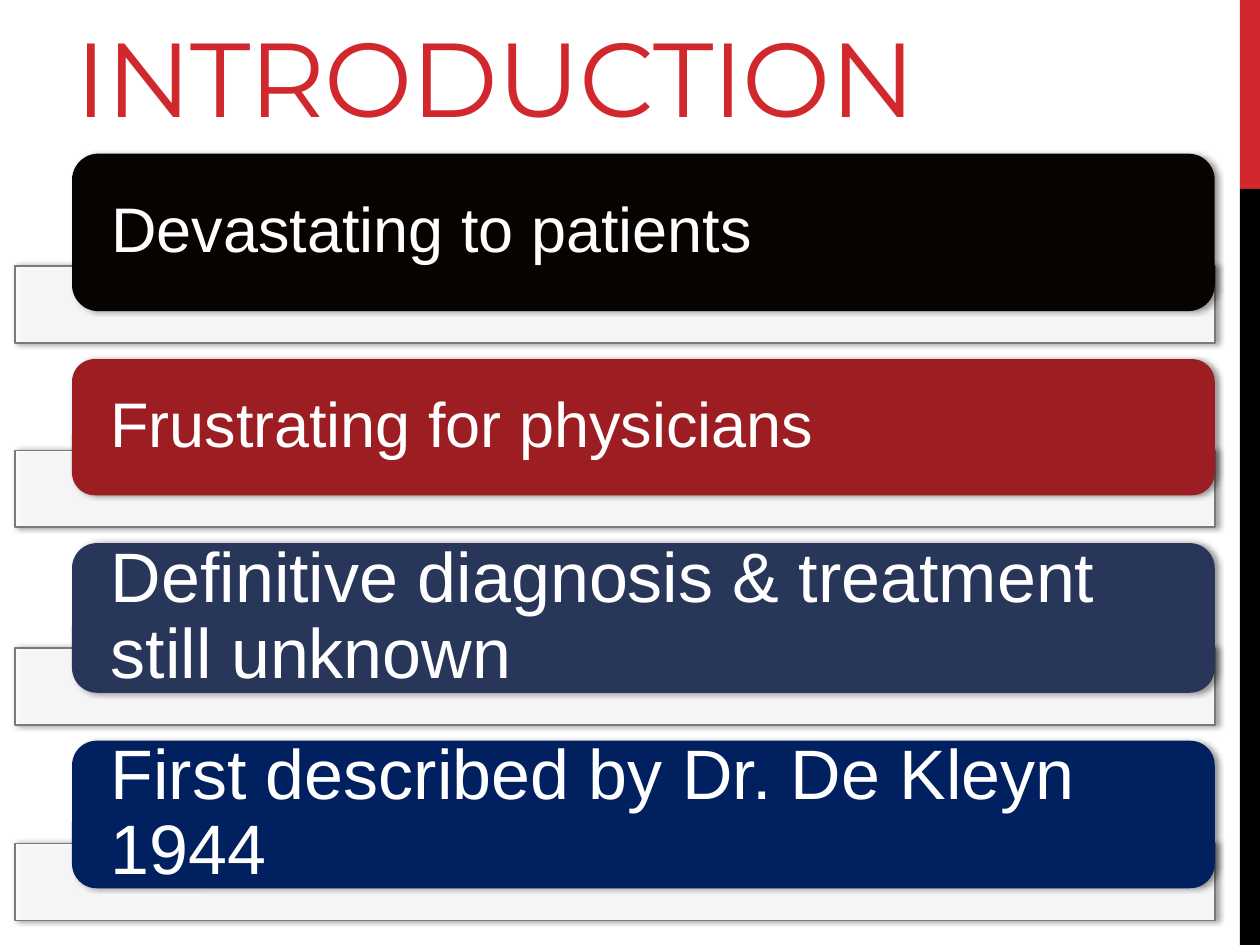
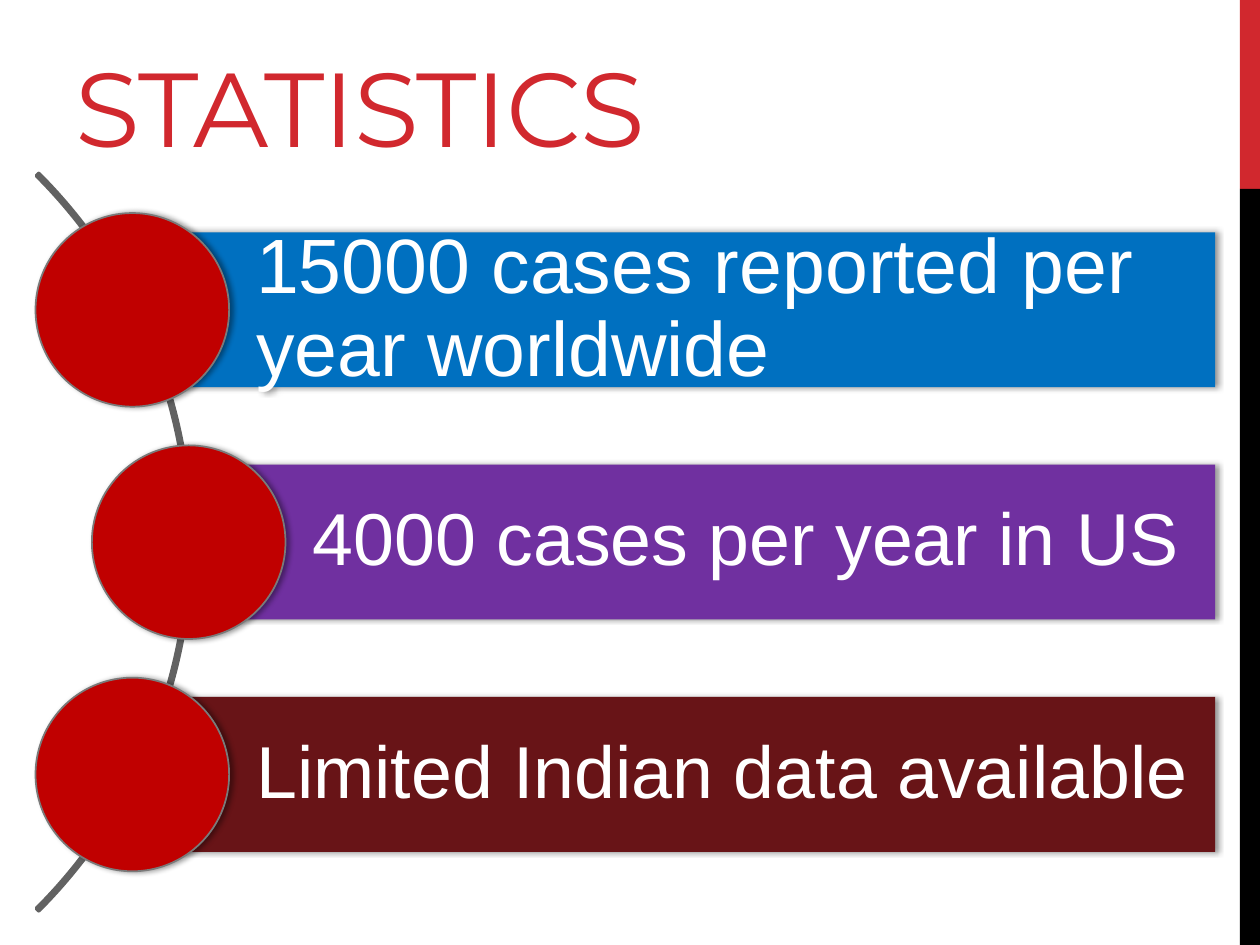
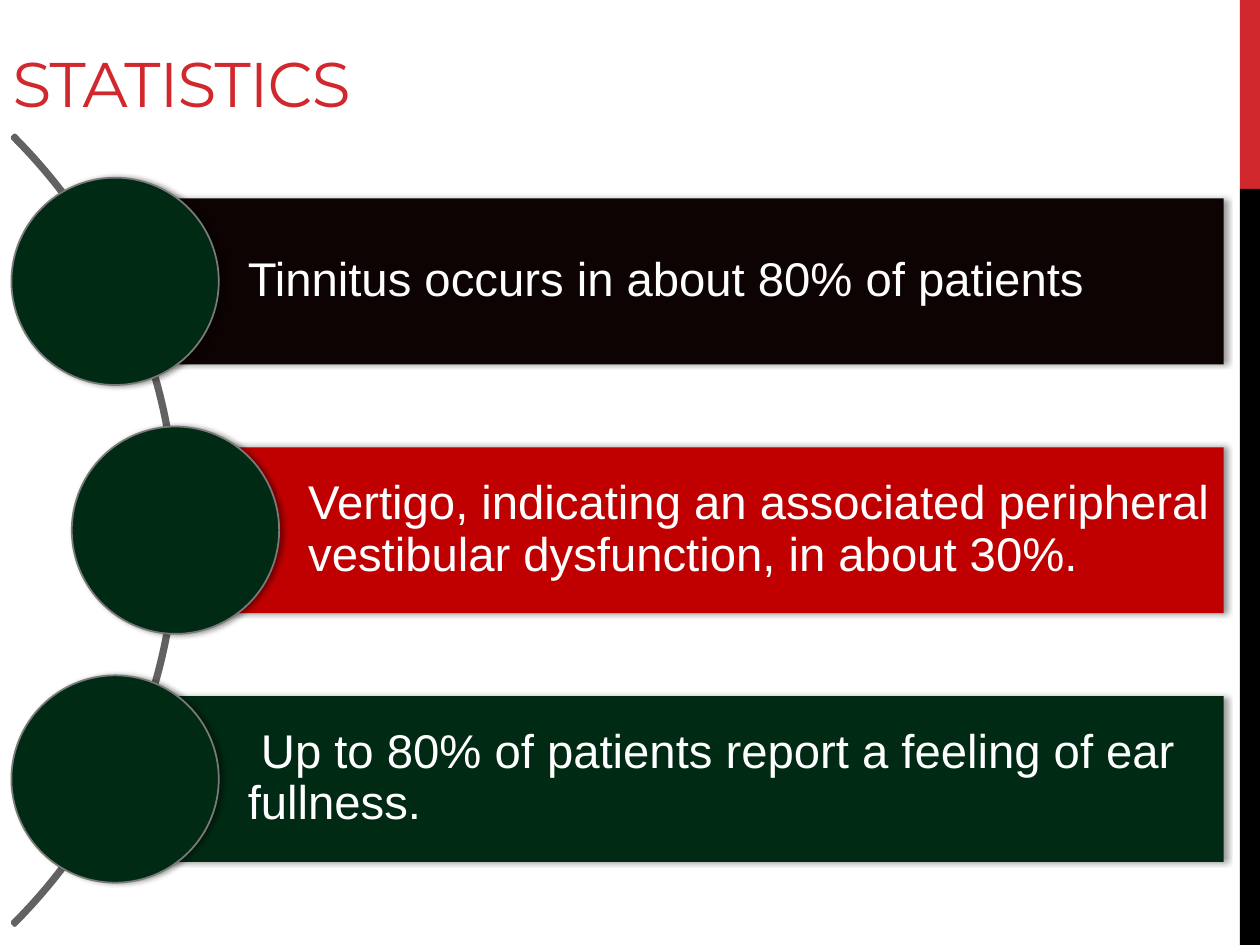
from dataclasses import dataclass

from lxml import etree
from pptx import Presentation
from pptx.dml.color import RGBColor
from pptx.enum.shapes import MSO_SHAPE
from pptx.enum.text import MSO_ANCHOR, MSO_AUTO_SIZE, PP_ALIGN
from pptx.oxml.ns import qn
from pptx.util import Pt

RECT = MSO_SHAPE.RECTANGLE
ROUNDED = MSO_SHAPE.ROUNDED_RECTANGLE
CIRCLE = MSO_SHAPE.OVAL
ARC = MSO_SHAPE.BLOCK_ARC
MIDDLE = MSO_ANCHOR.MIDDLE
BOTTOM = MSO_ANCHOR.BOTTOM
LEFT = PP_ALIGN.LEFT
NO_AUTOFIT = MSO_AUTO_SIZE.NONE
TITLE_ONLY = 5


@dataclass(frozen=True)
class Theme:
    title_font: str = "Montserrat"
    body_font: str = "Arial"
    accent: str = "D1282E"
    black: str = "000000"
    white: str = "FFFFFF"
    outline: str = "7A7A7A"
    arc: str = "626262"
    ink: str = "070301"
    brick: str = "9D1E22"
    slate: str = "283659"
    navy: str = "002060"
    blue: str = "0070C0"
    purple: str = "7030A0"
    maroon: str = "681417"
    crimson: str = "C00000"
    soot: str = "0D0303"
    forest: str = "002A13"
    title_large: int = 60
    title_small: int = 36
    body_xl: int = 44
    body_large: int = 42
    body_medium: int = 40
    body_small: int = 36
    body_compact: int = 27


def write_text(shape, text, *, font, size, color, anchor=MIDDLE, insets=None,
               line_spacing=None, tracking=None):
    """Fill a shape with left-aligned text; insets run left, top, right, bottom."""
    frame = shape.text_frame
    frame.text = text
    frame.word_wrap = True
    frame.auto_size = NO_AUTOFIT
    frame.vertical_anchor = anchor
    if insets:
        (frame.margin_left, frame.margin_top,
         frame.margin_right, frame.margin_bottom) = map(Pt, insets)
    paragraph = frame.paragraphs[0]
    paragraph.alignment = LEFT
    if line_spacing:
        paragraph.line_spacing = line_spacing
    run = paragraph.runs[0]
    run.font.name = font
    run.font.size = Pt(size)
    run.font.color.rgb = RGBColor.from_string(color)
    if tracking:
        run.font._element.set("spc", str(round(tracking * 100)))


def add_shadow(shape):
    """Cast a soft shadow to the right."""
    effects = shape._element.spPr.find(qn("a:effectLst"))
    outer = etree.SubElement(effects, qn("a:outerShdw"), blurRad=str(Pt(3.1)),
                             dist=str(Pt(1.8)), dir="0", rotWithShape="0")
    black = etree.SubElement(outer, qn("a:srgbClr"), val="000000")
    etree.SubElement(black, qn("a:alpha"), val="40000")


class Deck:
    def __init__(self, theme):
        self.theme = theme
        self.presentation = Presentation()
        self.presentation.slide_width = Pt(720)
        self.presentation.slide_height = Pt(540)
        self.slide = None

    def open_slide(self, title, box, size):
        """Start a slide with its title and the two-colour band at the right."""
        theme = self.theme
        layout = self.presentation.slide_layouts[TITLE_ONLY]
        self.slide = self.presentation.slides.add_slide(layout)
        self.shape(RECT, (708.5, 0, 11.5, 108), theme.accent)
        self.shape(RECT, (708.5, 108, 11.5, 432), theme.black)
        heading = self.slide.shapes.title
        heading.left, heading.top, heading.width, heading.height = map(Pt, box)
        write_text(heading, title, font=theme.title_font, size=size,
                   color=theme.accent, anchor=BOTTOM, tracking=-0.6,
                   insets=(7.2, 3.6, 7.2, 3.6))

    def shape(self, kind, box, fill=None, line=None, line_width=1,
              shadow=False, opacity=None):
        shape = self.slide.shapes.add_shape(kind, *map(Pt, box))
        shape.shadow.inherit = False
        if fill:
            shape.fill.solid()
            shape.fill.fore_color.rgb = RGBColor.from_string(fill)
        else:
            shape.fill.background()
        if opacity:
            color = shape._element.spPr.find(qn("a:solidFill"))[0]
            etree.SubElement(color, qn("a:alpha"), val=str(opacity * 1000))
        if line:
            shape.line.color.rgb = RGBColor.from_string(line)
            shape.line.width = Pt(line_width)
        else:
            shape.line.fill.background()
        if shadow:
            add_shadow(shape)
        return shape

    def label(self, shape, text, size, insets):
        write_text(shape, text, font=self.theme.body_font, size=size,
                   color=self.theme.white, insets=insets, line_spacing=0.9)

    def pill_list(self, top, rows):
        """Stack pills, each overlapping a pale strip; rows: text, size, colour, height."""
        strip_height, overlap, gap = 44, 25.6, 9
        for text, size, color, height in rows:
            strip_top = top + height - overlap
            self.shape(RECT, (8.5, strip_top, 686, strip_height), self.theme.white,
                       line=self.theme.outline, shadow=True, opacity=90)
            pill = self.shape(ROUNDED, (41.2, top, 653, height), color, shadow=True)
            self.label(pill, text, size, (18, 0, 18, 0))
            top = strip_top + strip_height + gap

    def arc_list(self, rows, *, bar_height, middle, outer_x, inner_x, right,
                 padding, circle_color):
        """Set bars and circles along an arc; rows: text, size, colour."""
        pitch = 1.5 * bar_height
        diameter = 1.25 * bar_height
        arc_size = 6.73 * bar_height
        arc = self.shape(ARC, (inner_x + 1.6 - arc_size, middle - arc_size / 2,
                               arc_size, arc_size),
                         line=self.theme.arc, line_width=2.25)
        for index, value in enumerate((189, 27, 0.003)):
            arc.adjustments[index] = value
        for index, (text, size, color) in enumerate(rows):
            x = inner_x if index == 1 else outer_x
            y = middle + (index - 1) * pitch
            bar = self.shape(RECT, (x, y - bar_height / 2, right - x, bar_height),
                             color, shadow=True)
            self.label(bar, text, size, (0.8 * bar_height, padding, padding, padding))
            self.shape(CIRCLE, (x - diameter / 2, y - diameter / 2, diameter, diameter),
                       circle_color, line=self.theme.outline, shadow=True)


def introduction(deck):
    theme = deck.theme
    deck.open_slide("INTRODUCTION", (36, 12, 596, 70.8), theme.title_large)
    deck.pill_list(87.8, [
        ("Devastating to patients", theme.body_small, theme.ink, 90),
        ("Frustrating for physicians", theme.body_small, theme.brick, 77.8),
        ("Definitive diagnosis & treatment still unknown",
         theme.body_medium, theme.slate, 85.5),
        ("First described by Dr. De Kleyn 1944",
         theme.body_medium, theme.navy, 84.3),
    ])


def case_numbers(deck):
    theme = deck.theme
    deck.open_slide("STATISTICS", (36, 12, 664, 88), theme.title_large)
    deck.arc_list([
        ("15000 cases reported per year worldwide", theme.body_xl, theme.blue),
        ("4000 cases per year in US", theme.body_large, theme.purple),
        ("Limited Indian data available", theme.body_large, theme.maroon),
    ], bar_height=88.5, middle=309.8, outer_x=75.6, inner_x=107.8, right=694.4,
        padding=8.4, circle_color=theme.crimson)


def symptoms(deck):
    theme = deck.theme
    size = theme.body_compact
    deck.open_slide("STATISTICS", (0, 12, 705.6, 60), theme.title_small)
    deck.arc_list([
        ("Tinnitus occurs in about 80% of patients", size, theme.soot),
        ("Vertigo, indicating an associated peripheral vestibular dysfunction, "
         "in about 30%.", size, theme.crimson),
        (" Up to 80% of patients report a feeling of ear fullness.",
         size, theme.forest),
    ], bar_height=94.8, middle=303, outer_x=65.8, inner_x=100.3, right=699.3,
        padding=5, circle_color=theme.forest)


def main():
    deck = Deck(Theme())
    for build in (introduction, case_numbers, symptoms):
        build(deck)
    deck.presentation.save("out.pptx")


if __name__ == "__main__":
    main()
